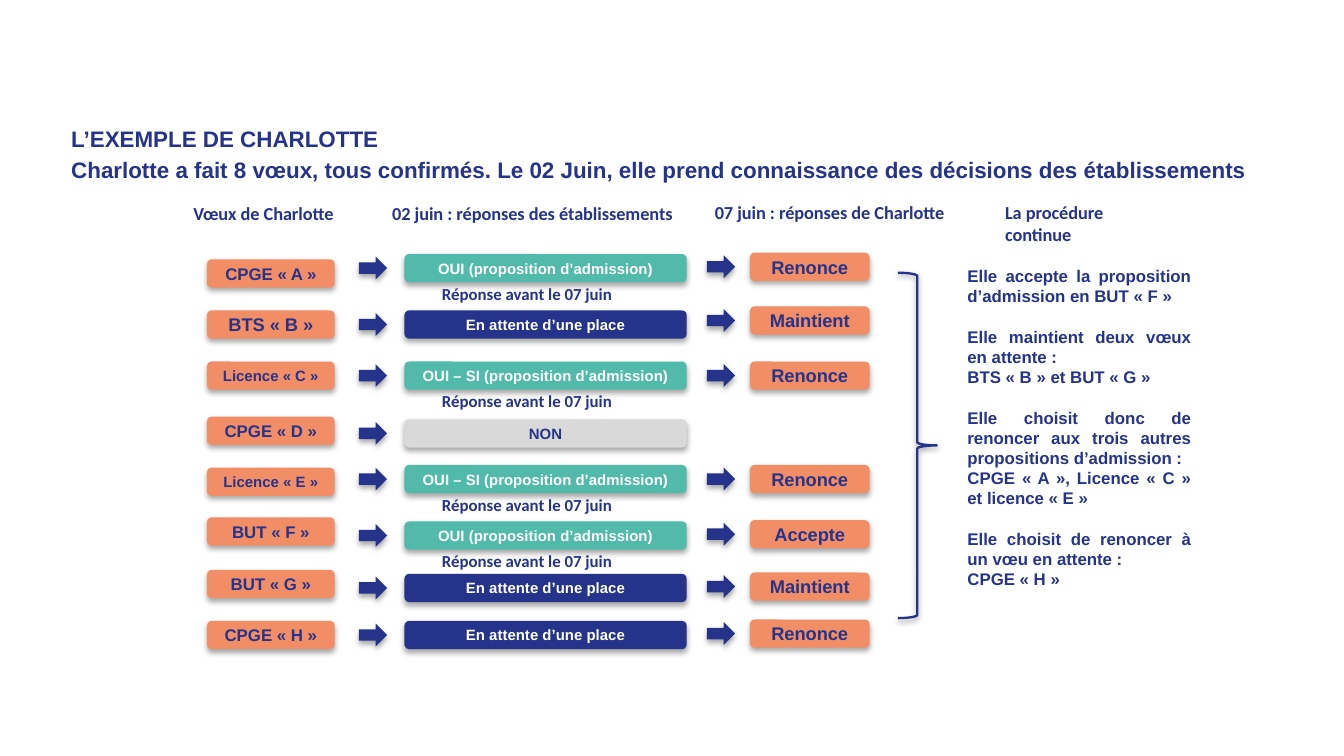
"""Build the slide that follows Charlotte's wishes through the admission procedure."""
from lxml import etree
from pptx import Presentation
from pptx.dml.color import RGBColor
from pptx.enum import shapes, text
from pptx.oxml import ns
from pptx.util import Inches, Pt

NAVY = RGBColor(0x26, 0x33, 0x8B)
TEAL = RGBColor(0x51, 0xBA, 0xAA)
CORAL = RGBColor(0xF2, 0x8E, 0x65)
GREY = RGBColor(0xD9, 0xD9, 0xD9)
WHITE = RGBColor(0xFF, 0xFF, 0xFF)

WISH_LEFT, ANSWER_LEFT, REPLY_LEFT = 1.54, 3.01, 5.58
WISH_WIDTH, ANSWER_WIDTH, REPLY_WIDTH = 0.95, 2.1, 0.89
FIRST_ARROW_LEFT, SECOND_ARROW_LEFT = 2.67, 5.26
BOX_HEIGHT = 0.21
ARROW_DROP, NOTE_DROP = 0.02, 0.17

YES = "OUI (proposition d’admission)"
YES_IF = "OUI – SI (proposition d’admission)"
WAITING = "En attente d’une place"
NO = "NON"
ANSWER_COLOURS = {
    YES: (TEAL, WHITE),
    YES_IF: (TEAL, WHITE),
    WAITING: (NAVY, WHITE),
    NO: (GREY, NAVY),
}
DEADLINE = "Réponse avant le 07 juin"

ROWS = [
    ("CPGE « A »", 9, 1.93, YES, 1.89, "Renonce", 1.88),
    ("BTS « B »", 9.75, 2.31, WAITING, 2.31, "Maintient", 2.28),
    ("Licence « C »", 8, 2.69, YES_IF, 2.69, "Renonce", 2.69),
    ("CPGE « D »", 9, 3.1, NO, 3.12, None, None),
    ("Licence « E »", 8, 3.48, YES_IF, 3.46, "Renonce", 3.46),
    ("BUT « F »", 9, 3.85, YES, 3.88, "Accepte", 3.87),
    ("BUT « G »", 9, 4.24, WAITING, 4.27, "Maintient", 4.26),
    ("CPGE « H »", 9, 4.62, WAITING, 4.62, "Renonce", 4.61),
]

HEADINGS = [
    ("Vœux de Charlotte", 1.34, 1.46, 1.6, 0.27),
    ("02 juin : réponses des établissements", 2.82, 1.46, 2.36, 0.27),
    ("07 juin : réponses de Charlotte", 5.22, 1.45, 2, 0.27),
    ("La procédure continue", 7.38, 1.45, 1.42, 0.43),
]

OUTCOMES = [
    ["Elle accepte la proposition d’admission en BUT « F »"],
    ["Elle maintient deux vœux en attente : ", "BTS « B » et BUT « G »"],
    [
        "Elle choisit donc de renoncer aux trois autres propositions d’admission : ",
        "CPGE « A », Licence « C » et licence « E »",
    ],
    ["Elle choisit de renoncer à un vœu en attente : ", "CPGE « H »"],
]


def format_paragraph(paragraph, size, font="Arial", colour=NAVY, align=text.PP_ALIGN.LEFT):
    """Align a paragraph and set its runs in bold."""
    paragraph.alignment = align
    for run in paragraph.runs:
        run.font.name = font
        run.font.size = Pt(size)
        run.font.bold = True
        run.font.color.rgb = colour


def add_soft_shadow(shape, opacity=35, distance=1.8):
    """Give a shape a blurred shadow that falls straight down."""
    shape.shadow.inherit = False
    effects = shape._element.spPr.find(ns.qn("a:effectLst"))
    shadow = etree.SubElement(
        effects, ns.qn("a:outerShdw"), blurRad=str(Pt(3.1)), dist=str(Pt(distance)),
        dir="5400000", rotWithShape="0",
    )
    black = etree.SubElement(shadow, ns.qn("a:srgbClr"), val="000000")
    etree.SubElement(black, ns.qn("a:alpha"), val=str(opacity * 1000))


def add_filled_shape(slide, kind, left, top, width, height, fill):
    """Add a filled preset shape with a soft shadow and no outline."""
    shape = slide.shapes.add_shape(
        kind, Inches(left), Inches(top), Inches(width), Inches(height)
    )
    shape.fill.solid()
    shape.fill.fore_color.rgb = fill
    shape.line.fill.background()
    add_soft_shadow(shape)
    return shape


def add_box(slide, words, left, top, width, fill, size, colour=NAVY):
    """Add a rounded box with a centred label."""
    shape = add_filled_shape(
        slide, shapes.MSO_SHAPE.ROUNDED_RECTANGLE, left, top, width, BOX_HEIGHT, fill
    )
    frame = shape.text_frame
    frame.margin_top = frame.margin_bottom = 0
    frame.vertical_anchor = text.MSO_ANCHOR.MIDDLE
    frame.text = words
    format_paragraph(frame.paragraphs[0], size, colour=colour, align=text.PP_ALIGN.CENTER)


def add_arrow(slide, left, top):
    """Add a small arrow that points to the next column."""
    add_filled_shape(slide, shapes.MSO_SHAPE.RIGHT_ARROW, left, top, 0.21, 0.17, NAVY)


def add_text_frame(slide, left, top, width, height):
    """Add a wrapping text box and return its frame."""
    box = slide.shapes.add_textbox(Inches(left), Inches(top), Inches(width), Inches(height))
    box.text_frame.word_wrap = True
    return box.text_frame


def add_label(slide, words, left, top, width, height, size):
    """Add a one-paragraph label."""
    frame = add_text_frame(slide, left, top, width, height)
    frame.text = words
    format_paragraph(frame.paragraphs[0], size, font="Calibri")


def add_title(slide):
    """Place the two-line title."""
    title = slide.shapes.title
    title.left, title.top = Inches(0.43), Inches(0.88)
    title.width, title.height = Inches(9.13), Inches(0.64)
    frame = title.text_frame
    frame.auto_size = text.MSO_AUTO_SIZE.NONE
    frame.vertical_anchor = text.MSO_ANCHOR.TOP
    frame.text = (
        "L’EXEMPLE DE CHARLOTTE\n"
        "Charlotte a fait 8 vœux, tous confirmés. Le 02 Juin, "
        "elle prend connaissance des décisions des établissements"
    )
    for paragraph in frame.paragraphs:
        format_paragraph(paragraph, 12)
    frame.paragraphs[1].space_before = Pt(2.4)


def add_row(slide, wish, wish_size, wish_top, answer, answer_top, reply, reply_top):
    """Add one wish with the answer it got and Charlotte's reply."""
    add_box(slide, wish, WISH_LEFT, wish_top, WISH_WIDTH, CORAL, wish_size)
    add_arrow(slide, FIRST_ARROW_LEFT, answer_top + ARROW_DROP)
    fill, colour = ANSWER_COLOURS[answer]
    add_box(slide, answer, ANSWER_LEFT, answer_top, ANSWER_WIDTH, fill, 8, colour)
    if answer in (YES, YES_IF):
        add_label(slide, DEADLINE, 3.19, answer_top + NOTE_DROP, 1.6, 0.25, 9)
    if reply:
        add_arrow(slide, SECOND_ARROW_LEFT, reply_top + ARROW_DROP)
        add_box(slide, reply, REPLY_LEFT, reply_top, REPLY_WIDTH, CORAL, 9.75)


def add_brace(slide):
    """Add the brace that gathers the replies."""
    brace = slide.shapes.add_shape(
        shapes.MSO_SHAPE.RIGHT_BRACE, Inches(6.68), Inches(2.03), Inches(0.29), Inches(2.57)
    )
    brace.fill.background()
    brace.line.color.rgb = NAVY
    brace.line.width = Pt(1.25)
    add_soft_shadow(brace, opacity=38, distance=1.6)


def add_outcomes(slide):
    """Add the justified summary of what Charlotte decides."""
    frame = add_text_frame(slide, 7.1, 1.93, 1.86, 2.83)
    frame.text = "\n".join(line for group in OUTCOMES for line in group)
    paragraphs = iter(frame.paragraphs)
    for group_number, group in enumerate(OUTCOMES):
        for line_number in range(len(group)):
            paragraph = next(paragraphs)
            format_paragraph(paragraph, 9, align=text.PP_ALIGN.JUSTIFY)
            if group_number and not line_number:
                paragraph.space_before = Pt(10.8)


def main():
    """Build and save the presentation."""
    presentation = Presentation()
    presentation.slide_width = Inches(10)
    presentation.slide_height = Inches(10) * 9 // 16
    slide = presentation.slides.add_slide(presentation.slide_layouts[5])
    add_title(slide)
    for heading in HEADINGS:
        add_label(slide, *heading, size=9.75)
    for row in ROWS:
        add_row(slide, *row)
    add_brace(slide)
    add_outcomes(slide)
    presentation.save("out.pptx")


if __name__ == "__main__":
    main()
